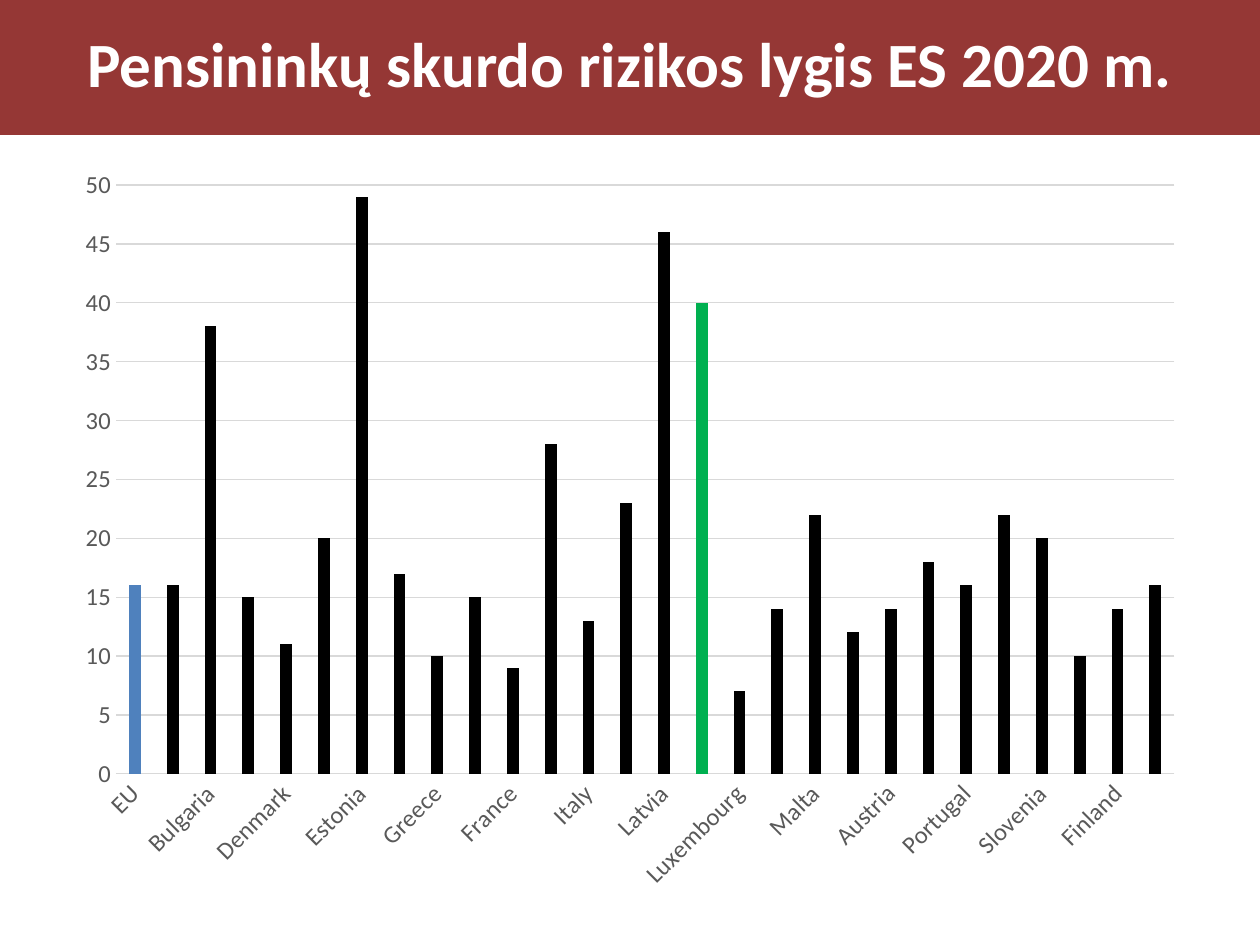
from pptx import Presentation
from pptx.chart.data import CategoryChartData
from pptx.dml.color import RGBColor
from pptx.enum.chart import XL_CHART_TYPE, XL_TICK_MARK
from pptx.enum.text import MSO_ANCHOR, PP_ALIGN
from pptx.util import Inches, Pt

COLUMN = XL_CHART_TYPE.COLUMN_CLUSTERED
NO_TICK = XL_TICK_MARK.NONE
MIDDLE = MSO_ANCHOR.MIDDLE
CENTER = PP_ALIGN.CENTER

FONT = "Calibri"
MAROON = RGBColor(0x95, 0x37, 0x35)
WHITE = RGBColor(0xFF, 0xFF, 0xFF)
BLACK = RGBColor(0x00, 0x00, 0x00)
GRAY = RGBColor(0x59, 0x59, 0x59)
PALE = RGBColor(0xD9, 0xD9, 0xD9)
BLUE = RGBColor(0x4F, 0x81, 0xBD)
GREEN = RGBColor(0x00, 0xB0, 0x50)

RATES = {
    "EU": 16, "Belgium": 16, "Bulgaria": 38, "Czechia": 15,
    "Denmark": 11, "Germany": 20, "Estonia": 49, "Ireland": 17,
    "Greece": 10, "Spain": 15, "France": 9, "Croatia": 28,
    "Italy": 13, "Cyprus": 23, "Latvia": 46, "Lithuania": 40,
    "Luxembourg": 7, "Hungary": 14, "Malta": 22, "Netherlands": 12,
    "Austria": 14, "Poland": 18, "Portugal": 16, "Romania": 22,
    "Slovenia": 20, "Slovakia": 10, "Finland": 14, "Sweden": 16,
}
ACCENTS = {"EU": BLUE, "Lithuania": GREEN}


def style_font(font, size, color, bold=False):
    font.name = FONT
    font.size = Pt(size)
    font.bold = bold
    font.color.rgb = color


def style_line(line, color):
    line.color.rgb = color
    line.width = Pt(0.75)


deck = Presentation()
deck.slide_width = Inches(10)
deck.slide_height = Inches(7.5)
slide = deck.slides.add_slide(deck.slide_layouts[5])

# Title band
title = slide.shapes.title
title.left, title.top = Inches(0), Inches(0)
title.width, title.height = Inches(10), Inches(1.07)
title.fill.solid()
title.fill.fore_color.rgb = MAROON
title.text_frame.text = "Pensininkų skurdo rizikos lygis ES 2020 m."
title.text_frame.vertical_anchor = MIDDLE
heading = title.text_frame.paragraphs[0]
heading.alignment = CENTER
heading.line_spacing = 0.9
style_font(heading.font, 36, WHITE, bold=True)

# Column chart
data = CategoryChartData()
data.categories = list(RATES)
data.add_series("Series 1", list(RATES.values()))
chart = slide.shapes.add_chart(
    COLUMN, Inches(0.5), Inches(1.23), Inches(9), Inches(5.95), data
).chart
chart.has_title = False
chart.has_legend = False
style_font(chart.font, 10, BLACK)

plot = chart.plots[0]
plot.vary_by_categories = False
plot.gap_width = 219
plot.overlap = -27
series = plot.series[0]
series.format.fill.solid()
series.format.fill.fore_color.rgb = BLACK
for i, name in enumerate(RATES):
    if name in ACCENTS:
        fill = series.points[i].format.fill
        fill.solid()
        fill.fore_color.rgb = ACCENTS[name]

# Axes
for axis in (chart.category_axis, chart.value_axis):
    axis.major_tick_mark = NO_TICK
    axis.minor_tick_mark = NO_TICK
    style_font(axis.tick_labels.font, 14, GRAY)

style_line(chart.category_axis.format.line, PALE)
scale = chart.value_axis
scale.minimum_scale = 0
scale.maximum_scale = 50
scale.major_unit = 5
scale.tick_labels.number_format = "General"
scale.tick_labels.number_format_is_linked = False
scale.format.line.fill.background()
scale.has_major_gridlines = True
style_line(scale.major_gridlines.format.line, PALE)

deck.save("out.pptx")
